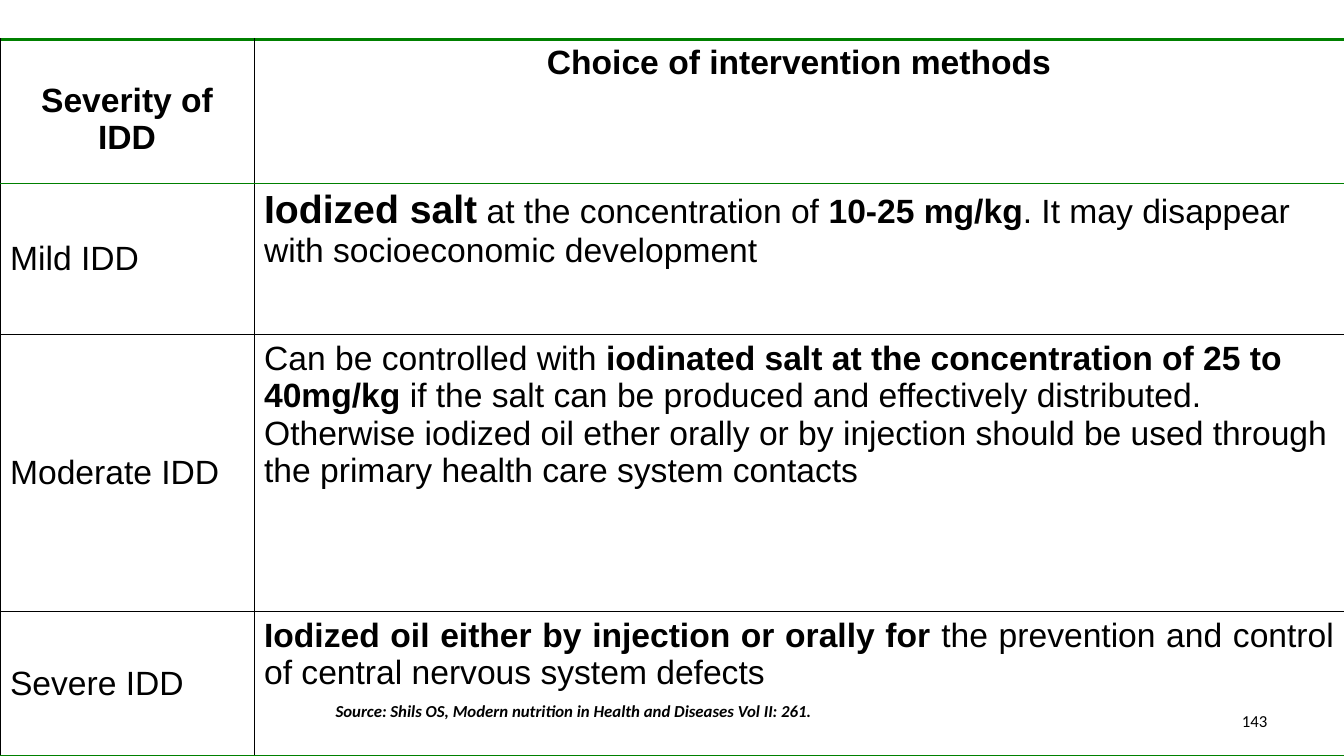
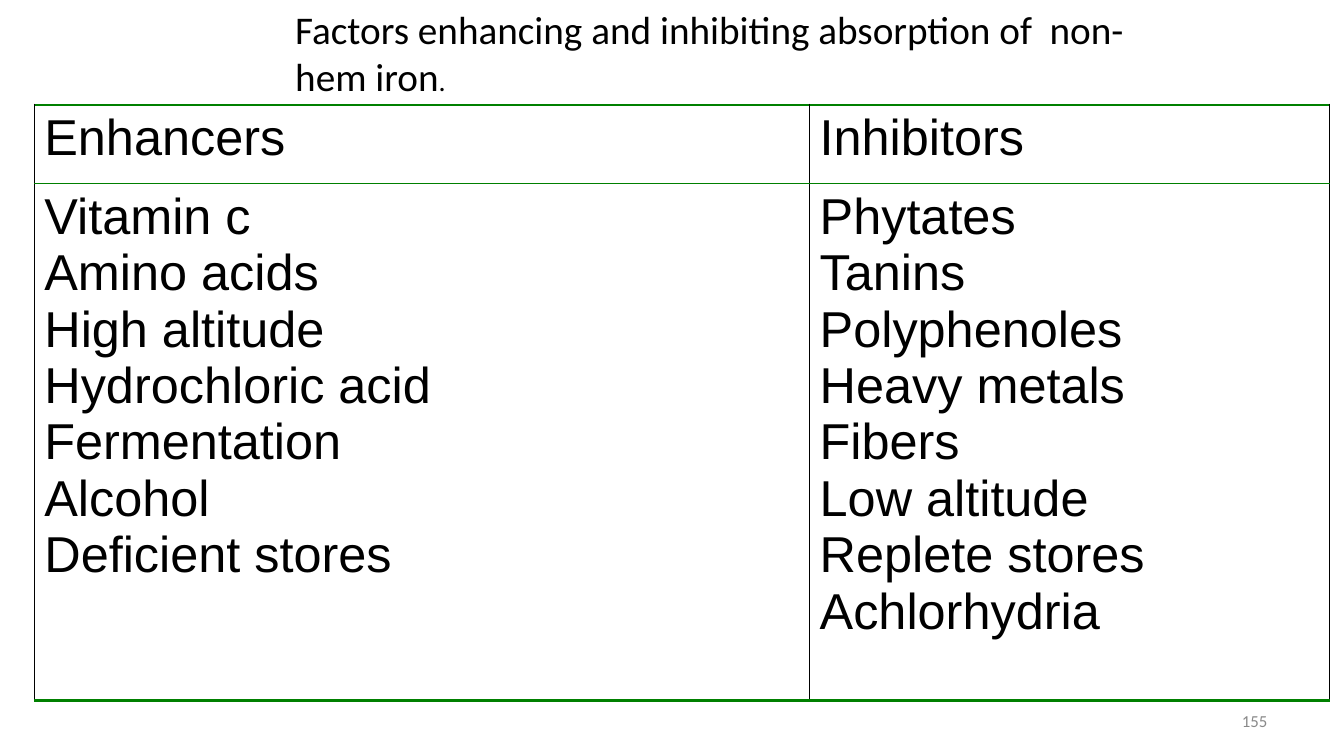
"""Build two nutrition slides: intervention methods for IDD and non-hem iron absorption."""
from dataclasses import dataclass
from typing import NamedTuple

from lxml.etree import SubElement
from pptx import Presentation
from pptx.dml.color import RGBColor
from pptx.enum.text import MSO_ANCHOR, PP_ALIGN
from pptx.oxml.ns import qn
from pptx.slide import Slide
from pptx.table import _Cell
from pptx.text.text import TextFrame
from pptx.util import Inches, Pt

COLORS = {"text": "000000", "rule": "008000", "muted": "898989"}
TABLE_FONT = "Arial"
TEXT_FONT = "Calibri"


class Run(NamedTuple):
    text: str
    size: float = 24
    bold: bool = False
    italic: bool = False
    color: str = "text"


class Border(NamedTuple):
    color: str
    width: float


class Box(NamedTuple):
    left: float
    top: float
    width: float
    height: float


THIN = Border("text", 0.75)
HEADER_RULE = Border("rule", 1)
OUTER_RULE = Border("rule", 2)
NUMBER_BOX = Box(9.56, 6.95, 3.11, 0.4)


@dataclass
class CellContent:
    paragraphs: list[list[Run]]
    align: PP_ALIGN = PP_ALIGN.LEFT
    anchor: MSO_ANCHOR = MSO_ANCHOR.TOP
    margin_top: float = 0.05


@dataclass
class TableContent:
    left: float
    top: float
    columns: list[float]
    rows: list[float]
    cells: list[list[CellContent]]


def write_text(frame: TextFrame, paragraphs: list[list[Run]], font: str, align: PP_ALIGN) -> None:
    for index, runs in enumerate(paragraphs):
        paragraph = frame.paragraphs[0] if index == 0 else frame.add_paragraph()
        paragraph.alignment = align
        for item in runs:
            run = paragraph.add_run()
            run.text = item.text
            run.font.name = font
            run.font.size = Pt(item.size)
            run.font.bold = item.bold
            run.font.italic = item.italic
            run.font.color.rgb = RGBColor.from_string(COLORS[item.color])


def add_text(slide: Slide, box: Box, runs: list[Run], align: PP_ALIGN = PP_ALIGN.LEFT) -> None:
    shape = slide.shapes.add_textbox(*(Inches(length) for length in box))
    frame = shape.text_frame
    frame.word_wrap = True
    frame.vertical_anchor = MSO_ANCHOR.MIDDLE
    write_text(frame, [runs], TEXT_FONT, align)


def set_borders(cell: _Cell, top: Border, bottom: Border) -> None:
    properties = cell._tc.get_or_add_tcPr()
    sides = {"a:lnL": THIN, "a:lnR": THIN, "a:lnT": top, "a:lnB": bottom}
    for position, (tag, border) in enumerate(sides.items()):
        line = SubElement(properties, qn(tag), w=str(Pt(border.width)))
        fill = SubElement(line, qn("a:solidFill"))
        SubElement(fill, qn("a:srgbClr"), val=COLORS[border.color])
        properties.insert(position, line)


def add_table(slide: Slide, content: TableContent) -> None:
    row_count, column_count = len(content.rows), len(content.columns)
    shape = slide.shapes.add_table(
        row_count, column_count, Inches(content.left), Inches(content.top),
        Inches(sum(content.columns)), Inches(sum(content.rows)))
    table = shape.table
    table.first_row = table.horz_banding = False
    for column, width in zip(table.columns, content.columns):
        column.width = Inches(width)
    for row, height in zip(table.rows, content.rows):
        row.height = Inches(height)
    edges = [OUTER_RULE, HEADER_RULE] + [THIN] * (row_count - 2) + [OUTER_RULE]
    for row_index, row_cells in enumerate(content.cells):
        for column_index, item in enumerate(row_cells):
            cell = table.cell(row_index, column_index)
            cell.fill.background()
            cell.vertical_anchor = item.anchor
            cell.margin_left = cell.margin_right = Inches(0.1)
            cell.margin_top = Inches(item.margin_top)
            cell.margin_bottom = Inches(0.05)
            set_borders(cell, edges[row_index], edges[row_index + 1])
            write_text(cell.text_frame, item.paragraphs, TABLE_FONT, item.align)


def add_number(slide: Slide, number: str, color: str) -> None:
    add_text(slide, NUMBER_BOX, [Run(number, 12, color=color)], PP_ALIGN.RIGHT)


def severity(name: str) -> CellContent:
    return CellContent([[Run(name)]], anchor=MSO_ANCHOR.MIDDLE)


def word_list(words: list[str], align: PP_ALIGN) -> CellContent:
    return CellContent([[Run(word, 36)] for word in words], align)


def build_intervention_slide(slide: Slide) -> None:
    mild = [
        Run("Iodized salt", 28, True),
        Run(" at the concentration of "),
        Run("10-25 mg/kg", bold=True),
        Run(". It may disappear with socioeconomic development"),
    ]
    moderate = [
        Run("Can be controlled with "),
        Run("iodinated salt at the concentration of 25 to 40mg/kg", bold=True),
        Run(" if the salt can be produced and effectively distributed. Otherwise iodized oil "
            "ether orally or by injection should be used through the primary health care "
            "system contacts"),
    ]
    severe = [
        Run("Iodized oil either by injection or orally for", bold=True),
        Run(" the prevention and control of central nervous system defects"),
    ]
    add_table(slide, TableContent(0, 0.39, [2.52, 10.81], [1.43, 1.5, 2.75, 1.43], [
        [CellContent([[Run("Severity of IDD", bold=True)]], PP_ALIGN.CENTER, margin_top=0.42),
         CellContent([[Run("Choice of intervention methods", bold=True)]], PP_ALIGN.CENTER)],
        [severity("Mild IDD"), CellContent([mild])],
        [severity("Moderate IDD"), CellContent([moderate])],
        [severity("Severe IDD"), CellContent([severe], PP_ALIGN.JUSTIFY)],
    ]))
    source = "Source: Shils OS, Modern nutrition in Health and Diseases Vol II: 261."
    add_text(slide, Box(3.23, 6.9, 7.58, 0.3), [Run(source, 12, True, True)])
    add_number(slide, "143", "text")


def build_absorption_slide(slide: Slide) -> None:
    add_text(slide, Box(2.83, 0, 8.44, 1.04), [
        Run("Factors enhancing and inhibiting absorption of  non-hem iron", 28),
        Run(".", 20),
    ])
    enhancers = ["Vitamin c", "Amino acids", "High altitude", "Hydrochloric acid",
                 "Fermentation", "Alcohol", "Deficient stores"]
    inhibitors = ["Phytates", "Tanins", "Polyphenoles", "Heavy metals", "Fibers",
                  "Low altitude", "Replete stores", "Achlorhydria"]
    top, header_height = 1.04, 0.78
    list_height = NUMBER_BOX.top - top - header_height
    add_table(slide, TableContent(0.34, top, [7.69, 5.16], [header_height, list_height], [
        [word_list([heading], PP_ALIGN.JUSTIFY) for heading in ("Enhancers", "Inhibitors")],
        [word_list(enhancers, PP_ALIGN.LEFT), word_list(inhibitors, PP_ALIGN.JUSTIFY)],
    ]))
    add_number(slide, "155", "muted")


def main() -> None:
    presentation = Presentation()
    presentation.slide_width = Inches(13.33)
    presentation.slide_height = Inches(7.5)
    blank_layout = presentation.slide_layouts[6]
    for build in (build_intervention_slide, build_absorption_slide):
        build(presentation.slides.add_slide(blank_layout))
    presentation.save("out.pptx")


if __name__ == "__main__":
    main()
